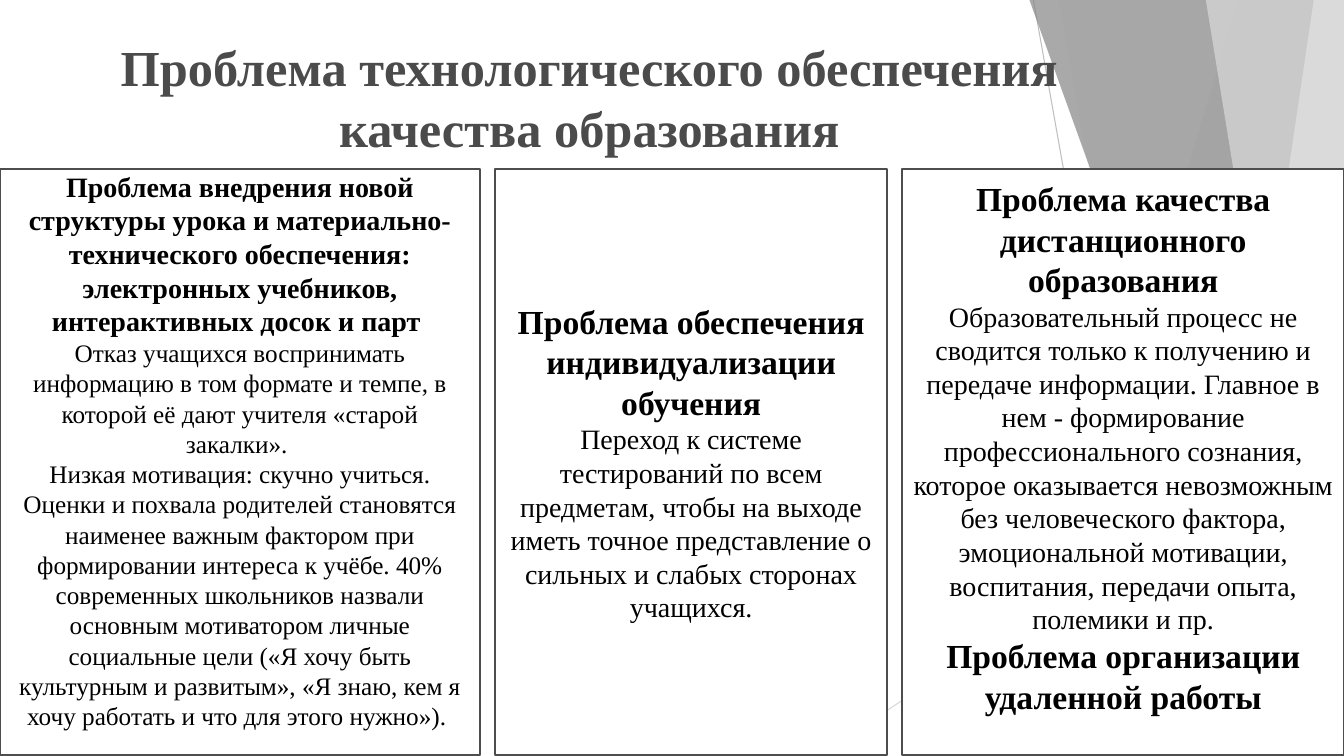
"""Builds a slide with three cards on problems of education quality."""
from dataclasses import dataclass
from lxml import etree
from pptx import Presentation
from pptx.dml.color import RGBColor
from pptx.enum import shapes as sh, text as tx
from pptx.oxml import ns
from pptx.util import Inches, Pt


@dataclass(frozen=True)
class Theme:
    font: str = "Times New Roman"
    title: str = "4B4B4B"
    ink: str = "000000"
    card: str = "FFFFFF"
    edge: str = "4D4D4D"
    head: int = 36
    large: int = 24
    mid: int = 20
    small: int = 18


T = Theme()
WIDE, HIGH = 13.33, 7.5
TOP, GAP = 1.68, 0.15

TITLE = "Проблема технологического обеспечения качества образования"

CARDS = [
    dict(width=4.76, anchor=tx.MSO_ANCHOR.TOP, pad=(0, 0), paras=[
        ("Проблема внедрения новой структуры урока и материально-технического "
         "обеспечения: электронных учебников, интерактивных досок и парт ", T.mid, True),
        ("Отказ учащихся воспринимать информацию в том формате и темпе, в которой "
         "её дают учителя «старой закалки». ", T.small, False),
        ("Низкая мотивация: скучно учиться. Оценки и похвала родителей становятся "
         "наименее важным фактором при формировании интереса к учёбе. 40% "
         "современных школьников назвали основным мотиватором личные социальные "
         "цели («Я хочу быть культурным и развитым», «Я знаю, кем я хочу работать "
         "и что для этого нужно»). ", T.small, False)]),
    dict(width=3.89, anchor=tx.MSO_ANCHOR.MIDDLE, pad=(0.05, 0.05), paras=[
        ("Проблема обеспечения индивидуализации обучения", T.large, True),
        ("Переход к системе тестирований по всем предметам, чтобы на выходе иметь "
         "точное представление о сильных и слабых сторонах учащихся.", T.mid, False)]),
    dict(width=4.38, anchor=tx.MSO_ANCHOR.MIDDLE, pad=(0.05, 0.35), paras=[
        ("Проблема качества дистанционного образования", T.large, True),
        ("Образовательный процесс не сводится только к получению и передаче "
         "информации. Главное в нем - формирование профессионального сознания, "
         "которое оказывается невозможным без человеческого фактора, эмоциональной "
         "мотивации, воспитания, передачи опыта, полемики и пр.", T.mid, False),
        ("Проблема организации удаленной работы", T.large, True)]),
]

RAYS = [((10.25, 0), (11.58, HIGH), "BFBFBF"), ((WIDE, 4.03), (8.12, HIGH), "D9D9D9")]
WEDGES = [
    (12.28, 10.04, "DDDDDD", 30),
    (10.5, 11.83, "DDDDDD", 20),
    (10.21, 12.91, "858585", 70),
    (13.03, 11.92, "EBEBEB", 70),
    (11.96, 13.18, "DDDDDD", 65),
]


def paint(fill, hue, alpha=100):
    fill.solid()
    fill.fore_color.rgb = RGBColor.from_string(hue)
    if alpha < 100:
        clr = fill._xPr.find(".//" + ns.qn("a:srgbClr"))
        etree.SubElement(clr, ns.qn("a:alpha")).set("val", str(alpha * 1000))


def write(para, words, size, bold=True, hue=T.ink):
    para.alignment = tx.PP_ALIGN.CENTER
    run = para.add_run()
    run.text = words
    run.font.name, run.font.size, run.font.bold = T.font, Pt(size), bold
    run.font.color.rgb = RGBColor.from_string(hue)


def draw_ray(slide, start, end, hue):
    ends = [Inches(n) for n in start + end]
    ray = slide.shapes.add_connector(sh.MSO_CONNECTOR.STRAIGHT, *ends)
    ray.line.width = Pt(0.75)
    paint(ray.line.fill, hue)
    etree.SubElement(ray._element.spPr, ns.qn("a:effectLst"))


def draw_wedge(slide, top, foot, hue, alpha):
    pen = slide.shapes.build_freeform(Inches(top), 0, scale=1.0)
    rest = [(WIDE, 0), (WIDE, HIGH), (foot, HIGH)]
    pen.add_line_segments([(Inches(x), Inches(y)) for x, y in rest])
    wedge = pen.convert_to_shape()
    wedge.shadow.inherit = False
    paint(wedge.fill, hue, alpha)
    wedge.line.fill.background()


def set_title(slide):
    title = slide.shapes.title
    title.left, title.top = Inches(0.74), Inches(0.24)
    title.width, title.height = Inches(10.21), Inches(TOP - 0.24)
    frame = title.text_frame
    frame.word_wrap = True
    frame.vertical_anchor = tx.MSO_ANCHOR.MIDDLE
    write(frame.paragraphs[0], TITLE, T.head, hue=T.title)
    slide.shapes._spTree.append(title._element)


def draw_card(slide, left, width, anchor, pad, paras):
    box = [Inches(n) for n in (left, TOP, width, HIGH - TOP - 0.01)]
    card = slide.shapes.add_shape(sh.MSO_SHAPE.RECTANGLE, *box)
    card.shadow.inherit = False
    paint(card.fill, T.card)
    paint(card.line.fill, T.edge)
    card.line.width = Pt(1.5)
    frame = card.text_frame
    frame.word_wrap = True
    frame.vertical_anchor = anchor
    frame.margin_top, frame.margin_bottom = [Inches(n) for n in pad]
    for i, (words, size, bold) in enumerate(paras):
        para = frame.add_paragraph() if i else frame.paragraphs[0]
        write(para, words, size, bold)


def main():
    deck = Presentation()
    deck.slide_width, deck.slide_height = Inches(WIDE), Inches(HIGH)
    slide = deck.slides.add_slide(deck.slide_layouts[5])
    for ray in RAYS:
        draw_ray(slide, *ray)
    for wedge in WEDGES:
        draw_wedge(slide, *wedge)
    set_title(slide)
    left = 0
    for card in CARDS:
        draw_card(slide, left, **card)
        left += card["width"] + GAP
    deck.save("out.pptx")


if __name__ == "__main__":
    main()
